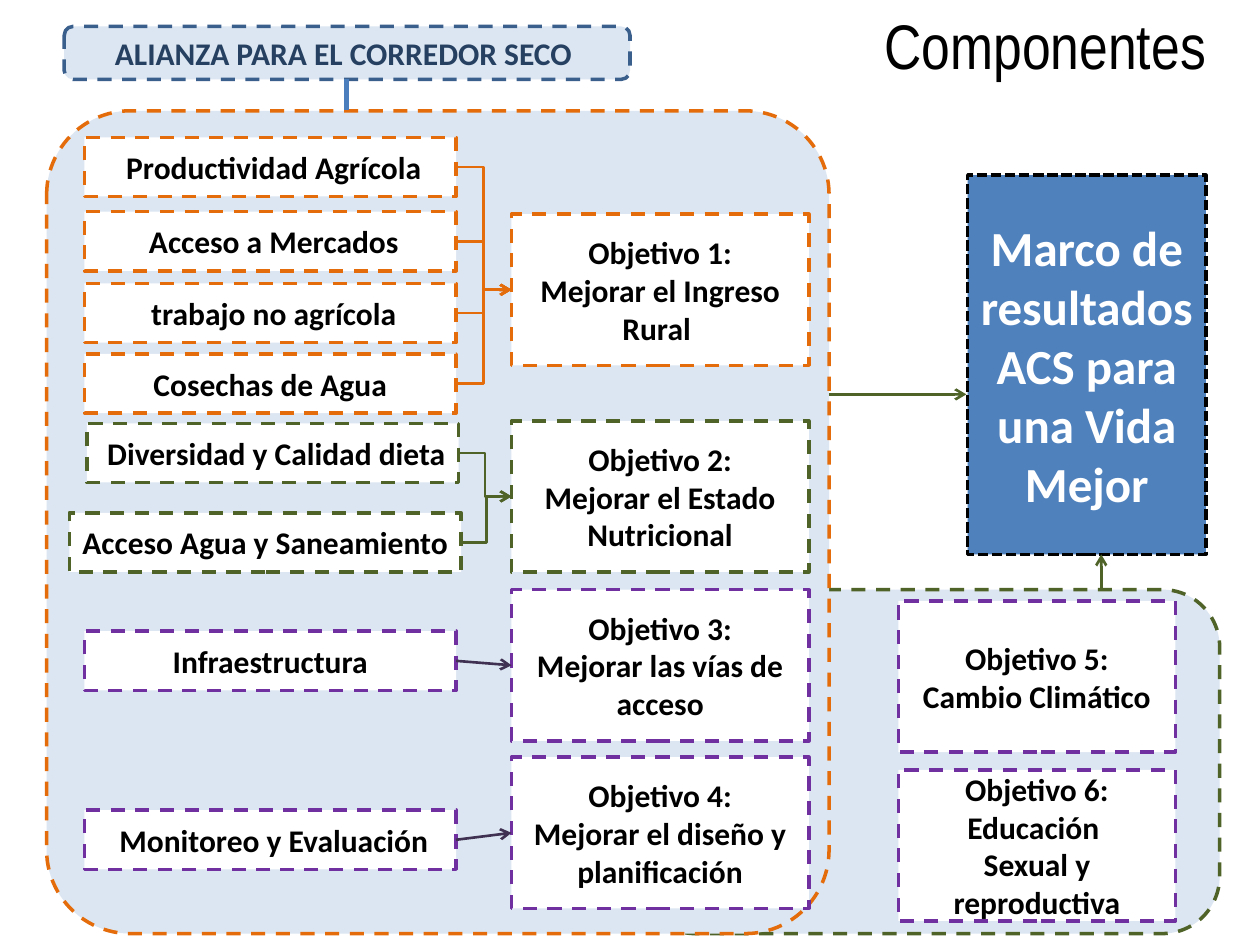
"""Builds the slide on the components of the dry corridor alliance."""
from lxml import etree
from pptx import Presentation
from pptx import util as u
from pptx.dml.color import RGBColor
from pptx.enum import dml, shapes, text
from pptx.oxml.ns import qn

PALE = RGBColor(0xDC, 0xE6, 0xF2)
BLUE = RGBColor(0x4F, 0x81, 0xBD)
EDGE = RGBColor(0x3A, 0x5F, 0x8C)
LINK = RGBColor(0x4B, 0x7E, 0xBC)
NAVY = RGBColor(0x25, 0x40, 0x61)
ORANGE = RGBColor(0xE4, 0x6C, 0x0A)
GREEN = RGBColor(0x4F, 0x62, 0x28)
PURPLE = RGBColor(0x70, 0x30, 0xA0)
PLUM = RGBColor(0x40, 0x31, 0x52)
WHITE = RGBColor(0xFF, 0xFF, 0xFF)
BLACK = RGBColor(0, 0, 0)

RECT = shapes.MSO_SHAPE.RECTANGLE
ROUND = shapes.MSO_SHAPE.ROUNDED_RECTANGLE
BENT = shapes.MSO_CONNECTOR.ELBOW
FLAT = shapes.MSO_CONNECTOR.STRAIGHT
DASH = dml.MSO_LINE.DASH

LEFT, WIDE, LOW = 0.67, 2.95, 0.47
MID, SPAN, TALL = 4.06, 2.36, 1.2
SIDE, BROAD = 7.13, 2.2

GOALS = [
    (ORANGE, ORANGE, BENT, 1.7, ["Objetivo 1:", "Mejorar el Ingreso Rural "], [
        (" Productividad Agrícola", LEFT, 1.09, WIDE),
        (" Acceso a Mercados", LEFT, 1.68, WIDE),
        (" trabajo no agrícola", LEFT, 2.25, WIDE),
        ("Cosechas de Agua", LEFT, 2.81, WIDE)]),
    (GREEN, GREEN, BENT, 3.34, ["Objetivo 2:", "Mejorar el Estado Nutricional"], [
        (" Diversidad y Calidad dieta", 0.69, 3.36, WIDE),
        ("Acceso Agua y Saneamiento", 0.55, 4.07, 3.11)]),
    (PURPLE, PLUM, FLAT, 4.68, ["Objetivo 3:", "Mejorar las vías de acceso"], [
        (" Infraestructura ", LEFT, 5.01, WIDE)]),
    (PURPLE, PLUM, FLAT, 6.01, ["Objetivo 4:", "Mejorar el diseño y planificación"], [
        (" Monitoreo y Evaluación", LEFT, 6.43, WIDE)]),
]
EXTRA = [
    (4.77, ["Objetivo 5:", "Cambio Climático"]),
    (6.11, ["Objetivo 6:", "Educación ", "Sexual y reproductiva"]),
]

deck = Presentation()
deck.slide_width, deck.slide_height = u.Inches(10), u.Inches(7.5)
slide = deck.slides.add_slide(deck.slide_layouts[6])


def write(frame, lines, size, ink, face="Calibri", bold=True, align=text.PP_ALIGN.CENTER):
    for i, line in enumerate(lines):
        para = frame.paragraphs[0] if i == 0 else frame.add_paragraph()
        para.text = line
        para.alignment = align
        para.font.size, para.font.name, para.font.bold = u.Pt(size), face, bold
        para.font.color.rgb = ink


def box(spot, edge, lines=(), fill=WHITE, kind=RECT, size=18, ink=BLACK, dash=DASH):
    shape = slide.shapes.add_shape(kind, *map(u.Inches, spot))
    shape.shadow.inherit = False
    shape.fill.solid()
    shape.fill.fore_color.rgb = fill
    shape.line.color.rgb, shape.line.width = edge, u.Pt(2)
    shape.line.dash_style = dash
    frame = shape.text_frame
    frame.word_wrap = True
    frame.vertical_anchor = text.MSO_ANCHOR.MIDDLE
    write(frame, lines, size, ink)
    return shape


def wire(ends, ink, kind=FLAT, width=1.5, head=True):
    line = slide.shapes.add_connector(kind, *map(u.Inches, ends))
    line.line.color.rgb, line.line.width = ink, u.Pt(width)
    if head:
        tail = etree.SubElement(line.line._get_or_add_ln(), qn("a:tailEnd"))
        tail.set("type", "arrow")
    etree.SubElement(line._element.spPr, qn("a:effectLst"))
    return line


box((5.06, 4.68, 4.62, 2.73), GREEN, fill=PALE, kind=ROUND)
box((7.68, 1.39, 1.89, 3.01), BLACK, ["Marco de resultados ACS para una Vida Mejor"],
    BLUE, size=28, ink=WHITE, dash=dml.MSO_LINE.SQUARE_DOT)
panel = box((0.37, 0.88, 6.21, 6.53), ORANGE, fill=PALE, kind=ROUND)
panel.adjustments[0] = 0.107
box((0.51, 0.21, 4.49, 0.42), EDGE, ["ALIANZA PARA EL CORREDOR SECO "],
    PALE, ROUND, ink=NAVY)

for edge, ink, kind, top, lines, parts in GOALS:
    goal = box((MID, top, SPAN, TALL), edge, lines)
    for label, left, y, width in parts:
        part = box((left, y, width, LOW), edge, [label])
        ends = left + width, y + LOW / 2, MID, top + TALL / 2
        link = wire(ends, ink, kind)
        link.begin_connect(part, 3)
        link.end_connect(goal, 1)

for top, lines in EXTRA:
    box((SIDE, top, BROAD, TALL), PURPLE, lines)

wire((2.75, 0.63, 2.75, 0.87), LINK, width=3, head=False)
wire((6.58, 3.13, 7.67, 3.13), GREEN)
wire((8.74, 4.68, 8.74, 4.4), GREEN)

title = slide.shapes.add_textbox(*map(u.Inches, (6.92, 0, 3.08, 0.71))).text_frame
title.word_wrap = False
write(title, ["Componentes"], 36, BLACK, "Arial Narrow", False, text.PP_ALIGN.LEFT)

deck.save("out.pptx")
